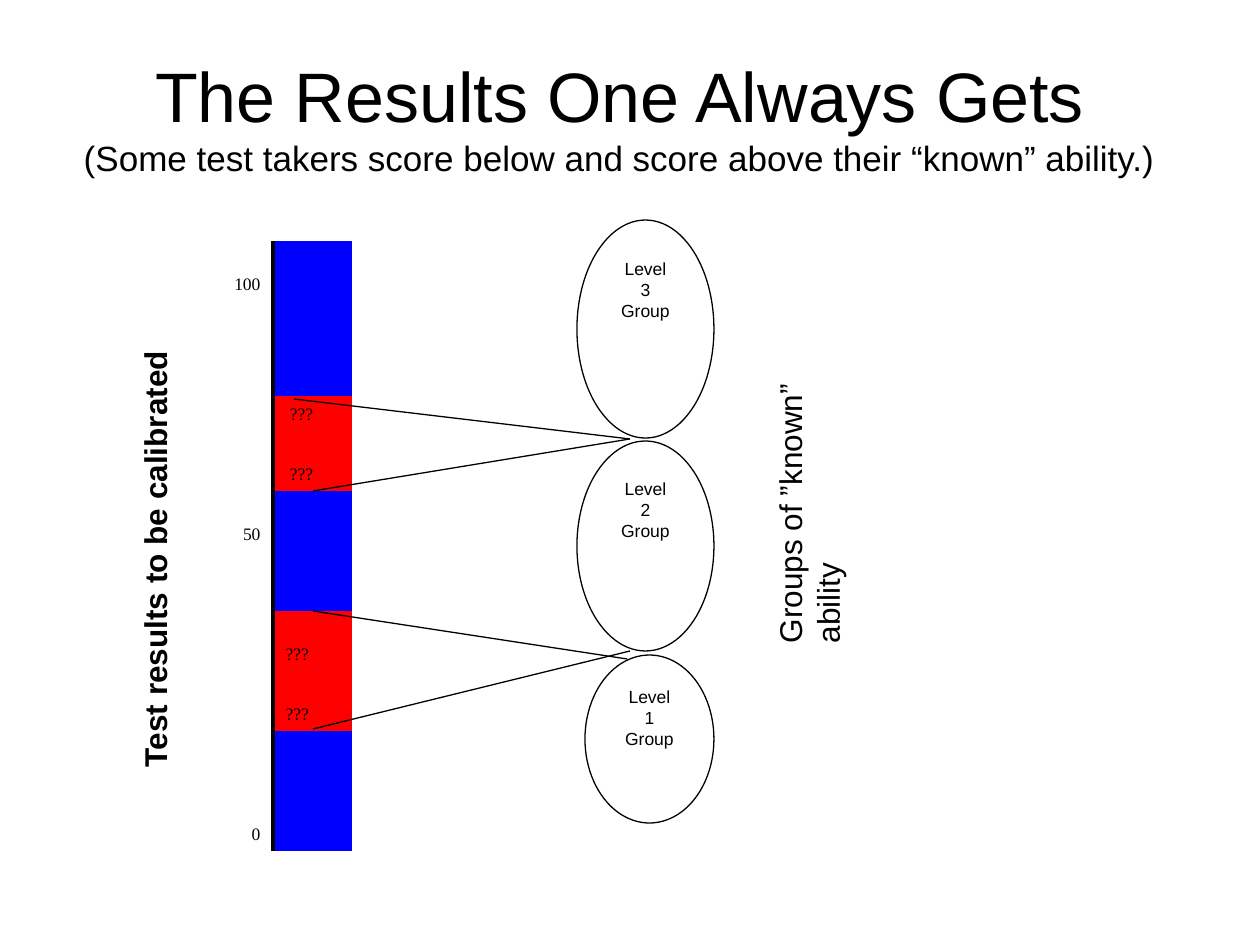
from lxml.etree import SubElement
from pptx import Presentation
from pptx.dml.color import RGBColor
from pptx.enum.shapes import MSO_CONNECTOR as Connector, MSO_SHAPE as Shape
from pptx.enum.text import MSO_ANCHOR as Anchor, PP_ALIGN as Align
from pptx.oxml import parse_xml
from pptx.oxml.ns import nsdecls, qn
from pptx.util import Emu, Pt

SCALE = 914400 // 126
COLORS = {"ink": "000000", "paper": "FFFFFF", "clear": "0000FF", "unclear": "FF0000"}
NO_TABLE_STYLE = "{2D5ABB26-0587-4C30-8999-92F81FD0307C}"


def px(length):
    return Emu(length * SCALE)


def color(name):
    return RGBColor.from_string(COLORS[name])


class SlideBuilder:
    sans = "Arial"
    serif = "Times New Roman"
    line_width = Pt(0.75)
    axis_width = Pt(2)

    def __init__(self, slide):
        self.slide = slide

    def style(self, font, size, family=sans, bold=False):
        font.name = family
        font.size = Pt(size)
        font.bold = bold
        font.color.rgb = color("ink")

    def title(self, left, top, width, height, lines):
        frame = self.slide.shapes.add_textbox(*map(px, (left, top, width, height))).text_frame
        frame.word_wrap = True
        frame.vertical_anchor = Anchor.MIDDLE
        paragraph = frame.paragraphs[0]
        paragraph.alignment = Align.CENTER
        for index, (text, size) in enumerate(lines):
            if index:
                paragraph.add_line_break()
            run = paragraph.add_run()
            run.text = text
            self.style(run.font, size)

    def vertical_label(self, center_x, center_y, length, thickness, text, bold=False):
        left, top = center_x - length // 2, center_y - thickness // 2
        shape = self.slide.shapes.add_textbox(*map(px, (left, top, length, thickness)))
        shape.rotation = 270
        shape.text_frame.word_wrap = True
        paragraph = shape.text_frame.paragraphs[0]
        paragraph.text = text
        self.style(paragraph.font, 18, bold=bold)

    def ellipse(self, left, top, width, height, text):
        shape = self.slide.shapes.add_shape(Shape.OVAL, *map(px, (left, top, width, height)))
        shape.shadow.inherit = False
        shape.fill.solid()
        shape.fill.fore_color.rgb = color("paper")
        shape.line.color.rgb = color("ink")
        shape.line.width = self.line_width
        frame = shape.text_frame
        frame.vertical_anchor = Anchor.TOP
        paragraph = frame.paragraphs[0]
        paragraph.text = text
        paragraph.alignment = Align.CENTER
        self.style(paragraph.font, 10)

    def line(self, start, end):
        connector = self.slide.shapes.add_connector(Connector.STRAIGHT, *map(px, start + end))
        connector.line.color.rgb = color("ink")
        connector.line.width = self.line_width
        SubElement(connector._element.spPr, qn("a:effectLst"))

    def cell(self, cell, text, alignment, axis_side, fill=None):
        cell.vertical_anchor = Anchor.BOTTOM
        paragraph = cell.text_frame.paragraphs[0]
        paragraph.text = text
        paragraph.alignment = alignment
        self.style(paragraph.font, 10, self.serif)
        if not text:
            paragraph._p.get_or_add_endParaRPr().set("sz", "1000")
        if fill:
            cell.fill.solid()
            cell.fill.fore_color.rgb = color(fill)
        else:
            cell.fill.background()
        border = parse_xml(
            f'<a:{axis_side} {nsdecls("a")} w="{self.axis_width}"><a:solidFill>'
            f'<a:srgbClr val="{COLORS["ink"]}"/></a:solidFill></a:{axis_side}>'
        )
        cell._tc.get_or_add_tcPr().insert(0, border)

    def score_table(self, left, top, column_width, rows):
        height = sum(row[0] for row in rows)
        frame = self.slide.shapes.add_table(
            len(rows), 2, *map(px, (left, top, 2 * column_width, height)))
        table = frame.table
        table.first_row = table.horz_banding = False
        table._tbl.tblPr.find(qn("a:tableStyleId")).text = NO_TABLE_STYLE
        for column in table.columns:
            column.width = px(column_width)
        for index, (row_height, score, band, mark) in enumerate(rows):
            table.rows[index].height = px(row_height)
            self.cell(table.cell(index, 0), score, Align.RIGHT, "lnR")
            self.cell(table.cell(index, 1), mark, Align.LEFT, "lnL", band)


def main():
    presentation = Presentation()
    presentation.slide_width, presentation.slide_height = px(1260), px(945)
    builder = SlideBuilder(presentation.slides.add_slide(presentation.slide_layouts[6]))

    builder.title(63, 42, 1113, 147, [
        ("The Results One Always Gets", 40),
        ("(Some test takers score below and score above their “known” ability.)", 20),
    ])
    builder.score_table(194, 241, 79, [
        (60, "100", "clear", ""),
        (60, "", "clear", ""),
        (35, "", "clear", ""),
        (35, "", "unclear", "\u00a0???".replace("\u00a0", " ")),
        (60, "", "unclear", " ???"),
        (60, "50", "clear", ""),
        (60, "", "clear", ""),
        (60, "", "unclear", "???"),
        (60, "", "unclear", "???"),
        (60, "", "clear", ""),
        (60, "0", "clear", ""),
    ])

    groups = [(3, 577, 220, 137, 218), (2, 577, 441, 137, 210), (1, 585, 655, 129, 168)]
    for level, *box in groups:
        builder.ellipse(*box, f"Level\v{level}\vGroup")

    for start, end in [
        ((630, 439), (313, 491)),
        ((630, 651), (313, 729)),
        ((630, 439), (294, 399)),
        ((627, 659), (313, 611)),
    ]:
        builder.line(start, end)

    builder.vertical_label(154, 537, 485, 50, "Test results to be calibrated", bold=True)
    builder.vertical_label(796, 475, 360, 63, "Groups of ”known” ability")
    presentation.save("out.pptx")


if __name__ == "__main__":
    main()
